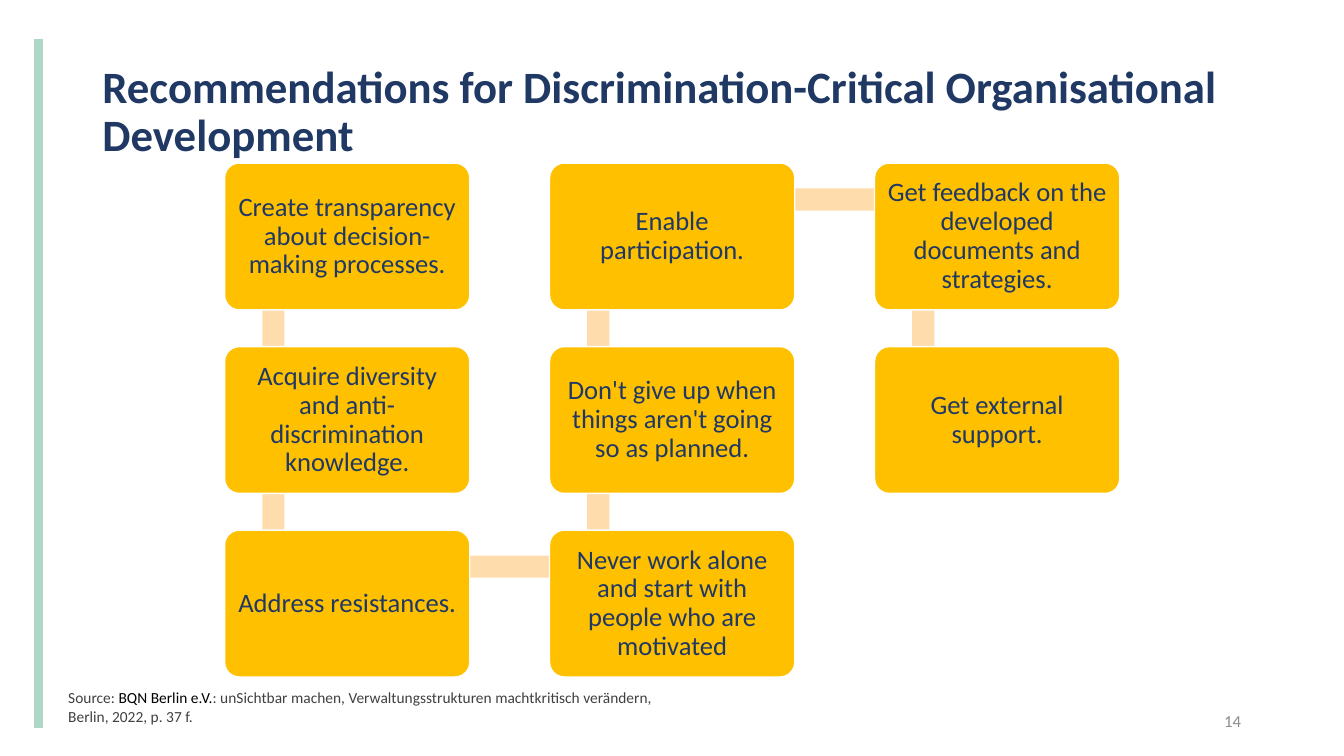
import dataclasses

import pptx
import pptx.dml.color
import pptx.enum.shapes
import pptx.enum.text
import pptx.oxml
import pptx.util

Cm = pptx.util.Cm
Pt = pptx.util.Pt
Shape = pptx.enum.shapes.MSO_SHAPE
Align = pptx.enum.text.PP_ALIGN
Anchor = pptx.enum.text.MSO_ANCHOR


@dataclasses.dataclass(frozen=True)
class Theme:
    font: str = "Calibri"
    navy: str = "203864"
    gold: str = "FFC000"
    peach: str = "FFDCAB"
    mint: str = "AED7C7"
    white: str = "FFFFFF"
    black: str = "000000"
    dark: str = "404040"
    grey: str = "8C8C8C"
    head: int = 32
    body: int = 19
    page: int = 12
    note: int = 11


@dataclasses.dataclass(frozen=True)
class Box:
    """A region, in centimetres."""
    left: float
    top: float
    width: float
    height: float

    def place(self):
        return [Cm(n) for n in (self.left, self.top, self.width, self.height)]


THEME = Theme()

# Cards in reading order: down the first column, up the second, down the third
STEPS = [
    "Create transparency about decision-making processes.",
    "Acquire diversity and anti-discrimination knowledge.",
    "Address resistances.",
    "Never work alone and start with people who are motivated",
    "Don't give up when things aren't going so as planned.",
    "Enable participation.",
    "Get feedback on the developed documents and strategies.",
    "Get external support.",
]
ROWS, COLS = 3, 3
SOURCE = [
    ("Source: ", THEME.dark),
    ("BQN Berlin e.V.", THEME.black),
    (": unSichtbar machen, Verwaltungsstrukturen machtkritisch verändern, "
     "Berlin, 2022, p. 37 f.", THEME.dark),
]


def rgb(code):
    return pptx.dml.color.RGBColor.from_string(code)


def style(para, size, color, align=Align.LEFT, bold=False):
    para.alignment = align
    para.font.name = THEME.font
    para.font.size = Pt(size)
    para.font.bold = bold
    para.font.color.rgb = rgb(color)


def add_text(slide, box, text, anchor=Anchor.TOP):
    """Add a wrapping text box and return its first paragraph."""
    frame = slide.shapes.add_textbox(*box.place()).text_frame
    frame.word_wrap = True
    frame.vertical_anchor = anchor
    para = frame.paragraphs[0]
    para.text = text
    return para


def add_block(slide, kind, box, fill):
    block = slide.shapes.add_shape(kind, *box.place())
    block.shadow.inherit = False
    block.fill.solid()
    block.fill.fore_color.rgb = rgb(fill)
    block.line.fill.background()
    return block


def add_stripe(slide, box):
    line = slide.shapes.add_connector(
        pptx.enum.shapes.MSO_CONNECTOR.STRAIGHT,
        Cm(box.left), Cm(box.top), Cm(box.left), Cm(box.top + box.height))
    line.line.color.rgb = rgb(THEME.mint)
    line.line.width = Pt(6)
    props = line._element.spPr
    props.append(pptx.oxml.parse_xml(
        '<a:effectLst xmlns:a='
        '"http://schemas.openxmlformats.org/drawingml/2006/main"/>'))


def add_title(slide, box):
    para = add_text(
        slide, box,
        "Recommendations for Discrimination-Critical Organisational Development",
        Anchor.MIDDLE)
    para.line_spacing = 0.9
    style(para, THEME.head, THEME.navy, bold=True)


def add_card(slide, box, text):
    card = add_block(slide, Shape.ROUNDED_RECTANGLE, box, THEME.gold)
    card.adjustments[0] = 0.1
    card.line.color.rgb = rgb(THEME.white)
    card.line.width = Pt(1)
    frame = card.text_frame
    frame.word_wrap = True
    frame.vertical_anchor = Anchor.MIDDLE
    frame.margin_left = frame.margin_right = Cm(0.2)
    frame.margin_top = frame.margin_bottom = Cm(0.2)
    para = frame.paragraphs[0]
    para.text = text
    para.line_spacing = 0.9
    style(para, THEME.body, THEME.navy, Align.CENTER)


def add_bar(slide, start, end):
    """Join the link points of two cards by a band."""
    thick = 0.56
    (ax, ay), (bx, by) = start, end
    if ax == bx:
        box = Box(ax - thick / 2, min(ay, by), thick, abs(by - ay))
    else:
        box = Box(ax, ay - thick / 2, bx - ax, thick)
    add_block(slide, Shape.RECTANGLE, box, THEME.peach)


def add_snake(slide, box):
    wide, high = 6.18, 3.7
    across = (box.width - wide) / (COLS - 1)
    down = (box.height - high) / (ROWS - 1)
    cards = []
    for index in range(len(STEPS)):
        col, row = divmod(index, ROWS)
        if col % 2:
            row = ROWS - 1 - row
        cards.append(Box(box.left + col * across, box.top + row * down,
                         wide, high))
    points = [(card.left + 1.23, card.top + 0.92) for card in cards]
    for start, end in zip(points, points[1:]):
        add_bar(slide, start, end)
    for card, text in zip(cards, STEPS):
        add_card(slide, card, text)


def add_source(slide, box):
    para = add_text(slide, box, "")
    for text, color in SOURCE:
        run = para.add_run()
        run.text = text
        run.font.color.rgb = rgb(color)
    style(para, THEME.note, THEME.dark)


def add_page(slide, box):
    para = add_text(slide, box, "14", Anchor.MIDDLE)
    style(para, THEME.page, THEME.grey, Align.RIGHT)


def main():
    deck = pptx.Presentation()
    deck.slide_width, deck.slide_height = Cm(33.87), Cm(19.05)
    slide = deck.slides.add_slide(deck.slide_layouts[6])
    add_stripe(slide, Box(0.97, 0.99, 0, 17.35))
    add_title(slide, Box(2.33, 1.01, 29.21, 3.68))
    add_page(slide, Box(29.75, 17.66, 1.78, 1.01))
    add_snake(slide, Box(5.66, 4.11, 22.56, 12.95))
    add_source(slide, Box(1.47, 17.22, 15.88, 1.2))
    deck.save("out.pptx")


if __name__ == "__main__":
    main()
